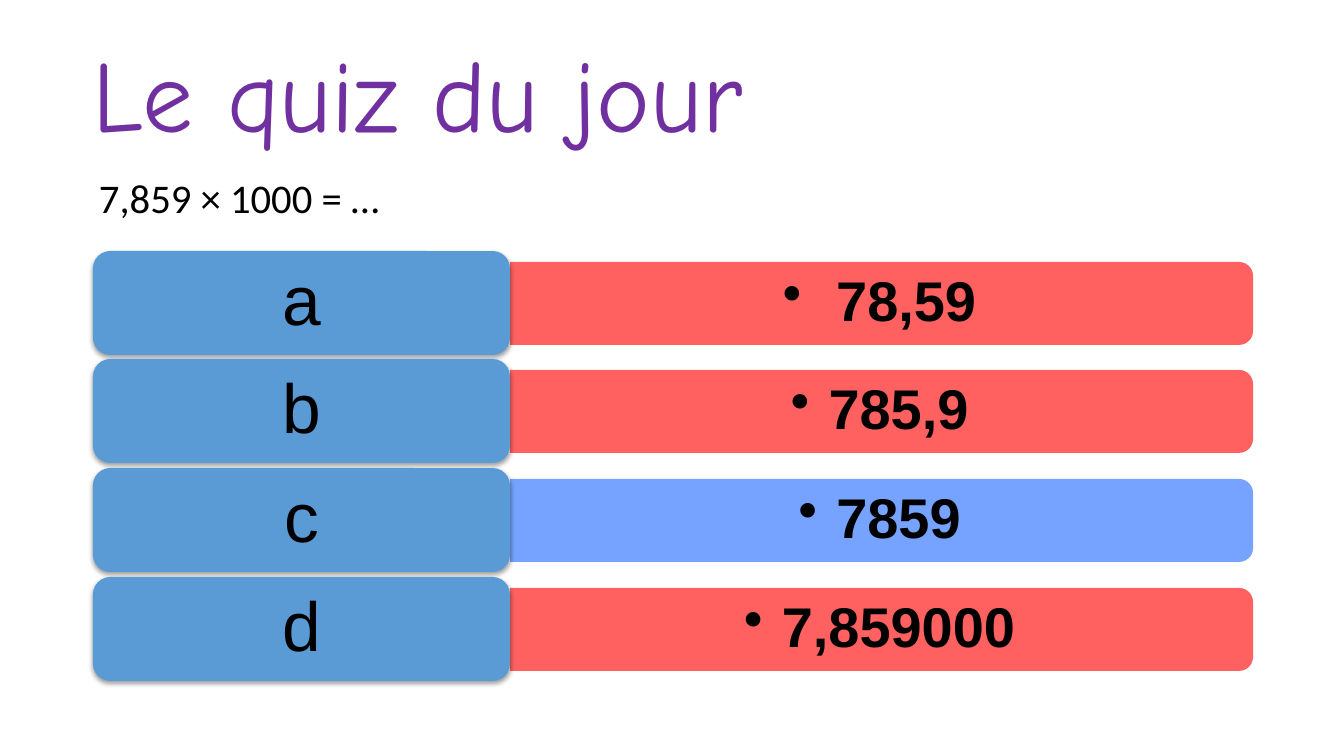
"""Build the quiz slide: a title, a question and four answer rows."""
from dataclasses import dataclass

from pptx import Presentation
from pptx.dml.color import RGBColor
from pptx.enum.shapes import MSO_SHAPE as Shape
from pptx.enum.text import MSO_ANCHOR as Anchor, PP_ALIGN as Align
from pptx.oxml.ns import qn
from pptx.util import Emu, Pt
from lxml.etree import SubElement

EMU_PER_PX = 914400 // 122


@dataclass(frozen=True)
class Theme:
    title: str = "7030A0"
    ink: str = "000000"
    label: str = "5B9BD5"
    wrong: str = "FF5050"
    right: str = "6699FF"
    bar_opacity: int = 90
    shadow_opacity: int = 38
    title_font: str = "Comic Neue"
    body_font: str = "Calibri"
    answer_font: str = "Arial"
    title_size: int = 60
    question_size: int = 24
    label_size: int = 41
    answer_size: int = 33


def px(length):
    return Emu(length * EMU_PER_PX)


def add_element(parent, tag, **attributes):
    element = SubElement(parent, qn(tag))
    for name, value in attributes.items():
        element.set(name, str(value))
    return element


def add_alpha(color, percent):
    add_element(color, "a:alpha", val=percent * 1000)


def write_text(shape, text, *, font, size, color, bold=False, align=Align.LEFT,
               anchor=Anchor.MIDDLE, insets=(0, 0, 0, 0), wrap=True,
               spacing=None, bullet_indent=0):
    frame = shape.text_frame
    frame.word_wrap = wrap
    frame.vertical_anchor = anchor
    (frame.margin_left, frame.margin_top,
     frame.margin_right, frame.margin_bottom) = map(px, insets)
    paragraph = frame.paragraphs[0]
    paragraph.alignment = align
    if spacing:
        paragraph.line_spacing = spacing
    if bullet_indent:
        properties = paragraph._p.get_or_add_pPr()
        properties.set("marL", str(px(bullet_indent)))
        properties.set("indent", str(-px(bullet_indent)))
        add_element(properties, "a:buChar", char="•")
    run = paragraph.add_run()
    run.text = text
    run.font.name = font
    run.font.size = Pt(size)
    run.font.bold = bold
    run.font.color.rgb = RGBColor.from_string(color)


class QuizSlide:
    def __init__(self, presentation, theme):
        self.theme = theme
        self.slide = presentation.slides.add_slide(presentation.slide_layouts[6])

    def text_box(self, left, top, width, height, text, **style):
        box = self.slide.shapes.add_textbox(*map(px, (left, top, width, height)))
        write_text(box, text, **style)

    def block(self, kind, left, top, width, height, color):
        shape = self.slide.shapes.add_shape(kind, *map(px, (left, top, width, height)))
        shape.shadow.inherit = False
        shape.fill.solid()
        shape.fill.fore_color.rgb = RGBColor.from_string(color)
        shape.line.fill.background()
        return shape

    def answer_bar(self, left, top, width, height, text, color):
        shift = (width - height) // 2
        bar = self.block(Shape.ROUND_2_SAME_RECTANGLE, left + shift, top - shift,
                         height, width, color)
        bar.rotation = 90
        add_alpha(bar._element.spPr.find(".//" + qn("a:srgbClr")),
                  self.theme.bar_opacity)
        self.text_box(left, top + 4, width - 4, height - 8, text,
                      font=self.theme.answer_font, size=self.theme.answer_size,
                      color=self.theme.ink, bold=True, align=Align.CENTER,
                      insets=(17, 9, 17, 9), spacing=0.9, bullet_indent=38)

    def label(self, left, top, width, height, text):
        shape = self.block(Shape.ROUNDED_RECTANGLE, left, top, width, height,
                           self.theme.label)
        effects = shape._element.spPr.find(qn("a:effectLst"))
        shadow = add_element(effects, "a:outerShdw", blurRad=Pt(3.1), dist=Pt(1.6),
                             dir=90 * 60000, algn="ctr", rotWithShape=0)
        add_alpha(add_element(shadow, "a:srgbClr", val=self.theme.ink),
                  self.theme.shadow_opacity)
        write_text(shape, text, font=self.theme.answer_font,
                   size=self.theme.label_size, color=self.theme.ink,
                   align=Align.CENTER, insets=(26, 16, 26, 16), spacing=0.9)


def main():
    theme = Theme()
    presentation = Presentation()
    presentation.slide_width, presentation.slide_height = px(1344), px(756)
    quiz = QuizSlide(presentation, theme)

    quiz.text_box(93, 28, 1160, 182, "Le quiz du jour", font=theme.title_font,
                  size=theme.title_size, color=theme.title,
                  insets=(0, 0, 0, 38), spacing=0.9)

    answers = {"a": " 78,59", "b": "785,9", "c": "7859", "d": "7,859000"}
    for row, (letter, answer) in enumerate(answers.items()):
        top = 251 + row * 326 // 3
        color = theme.right if letter == "c" else theme.wrong
        quiz.answer_bar(510, top + 11, 743, 83, answer, color)
        quiz.label(93, top, 417, 104, letter)

    quiz.text_box(87, 167, 331, 61, "7,859 × 1000 = …", font=theme.body_font,
                  size=theme.question_size, color=theme.ink, anchor=Anchor.TOP,
                  insets=(12, 6, 12, 6), wrap=False)
    presentation.save("out.pptx")


if __name__ == "__main__":
    main()
